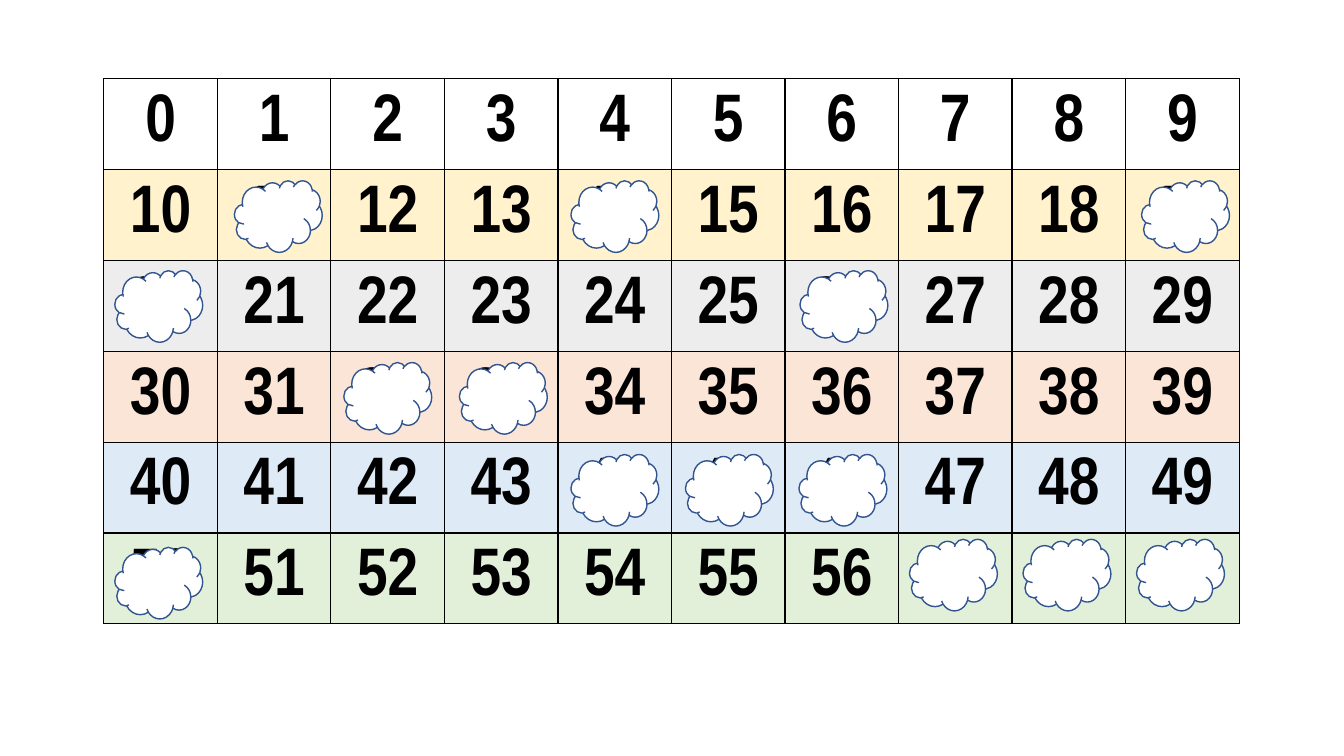
from lxml.etree import SubElement
from pptx import Presentation
from pptx.dml.color import RGBColor
from pptx.enum.shapes import MSO_SHAPE as Shape
from pptx.enum.text import MSO_ANCHOR as Anchor, PP_ALIGN as Align
from pptx.oxml.ns import qn
from pptx.util import Inches, Pt

WHITE = RGBColor(0xFF, 0xFF, 0xFF)
BLACK = RGBColor(0x00, 0x00, 0x00)
CLOUD_LINE = RGBColor(0x32, 0x54, 0x91)
YELLOW = RGBColor(0xFF, 0xF2, 0xCC)
GRAY = RGBColor(0xED, 0xED, 0xED)
ORANGE = RGBColor(0xFB, 0xE5, 0xD6)
BLUE = RGBColor(0xDE, 0xEB, 0xF7)
GREEN = RGBColor(0xE2, 0xF0, 0xD9)

ROW_FILLS = [None, YELLOW, GRAY, ORANGE, BLUE, GREEN]
CLOUD_OFFSETS = {
    11: (0.17, 0.11), 14: (0.13, 0.11), 19: (0.16, 0.11),
    20: (0.11, 0.10), 26: (0.15, 0.10),
    32: (0.13, 0.11), 33: (0.15, 0.11),
    44: (0.13, 0.12), 45: (0.14, 0.12), 46: (0.14, 0.12),
    50: (0.11, 0.14), 57: (0.11, 0.06), 58: (0.11, 0.06), 59: (0.11, 0.06),
}
NUMBER_FONT = {"name": "Arial Narrow", "size": Pt(48), "bold": True}

COLUMNS, ROWS = 10, len(ROW_FILLS)
LEFT, TOP, WIDTH, HEIGHT = 1.03, 0.78, 11.26, 5.41
CELL_WIDTH, CELL_HEIGHT = WIDTH / COLUMNS, HEIGHT / ROWS
CLOUD_WIDTH, CLOUD_HEIGHT = 0.87, 0.71


def add_borders(cell):
    properties = cell._tc.get_or_add_tcPr()
    for side in ("lnL", "lnR", "lnT", "lnB"):
        line = SubElement(properties, qn(f"a:{side}"), w=str(Pt(1)))
        fill = SubElement(line, qn("a:solidFill"))
        SubElement(fill, qn("a:srgbClr"), val=str(BLACK))


def write_cell(cell, number, color):
    add_borders(cell)
    if color is None:
        cell.fill.background()
    else:
        cell.fill.solid()
        cell.fill.fore_color.rgb = color
    cell.vertical_anchor = Anchor.MIDDLE
    para = cell.text_frame.paragraphs[0]
    para.alignment = Align.CENTER
    span = para.add_run()
    span.text = str(number)
    for name, value in NUMBER_FONT.items():
        setattr(span.font, name, value)
    span.font.color.rgb = BLACK


def add_number_table(page):
    box = page.shapes.add_table(
        ROWS, COLUMNS, Inches(LEFT), Inches(TOP), Inches(WIDTH), Inches(HEIGHT))
    table = box.table
    table.first_row = table.horz_banding = False
    for number in range(ROWS * COLUMNS):
        row, column = divmod(number, COLUMNS)
        write_cell(table.cell(row, column), number, ROW_FILLS[row])


def add_cloud(page, number, offset):
    row, column = divmod(number, COLUMNS)
    cloud = page.shapes.add_shape(
        Shape.CLOUD,
        Inches(LEFT + column * CELL_WIDTH + offset[0]),
        Inches(TOP + row * CELL_HEIGHT + offset[1]),
        Inches(CLOUD_WIDTH), Inches(CLOUD_HEIGHT))
    cloud.shadow.inherit = False
    cloud.fill.solid()
    cloud.fill.fore_color.rgb = WHITE
    cloud.line.color.rgb = CLOUD_LINE
    cloud.line.width = Pt(1)


def main():
    deck = Presentation()
    deck.slide_width, deck.slide_height = Inches(13.33), Inches(7.5)
    page = deck.slides.add_slide(deck.slide_layouts[6])
    add_number_table(page)
    for number, offset in CLOUD_OFFSETS.items():
        add_cloud(page, number, offset)
    deck.save("out.pptx")


if __name__ == "__main__":
    main()
